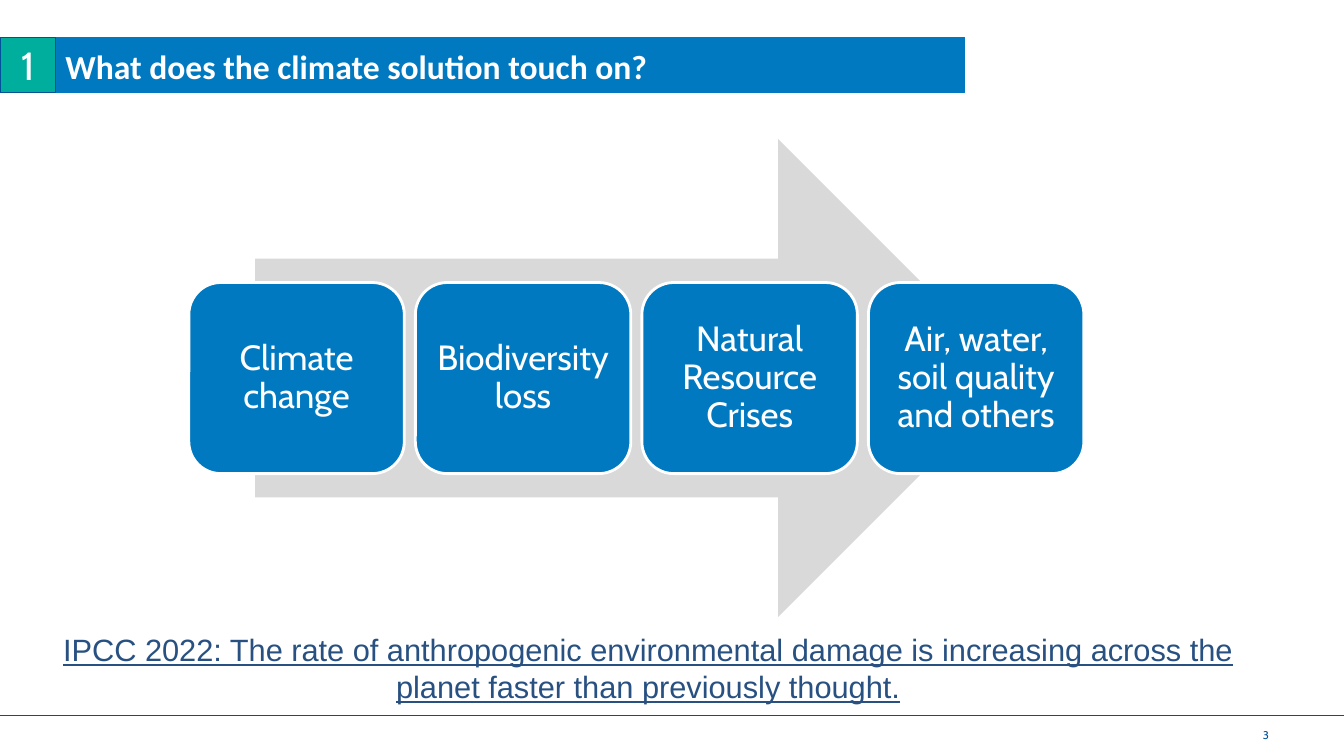
"""Build the slide on what the climate solution touches on."""
from lxml import etree
from pptx import Presentation
from pptx.dml.color import RGBColor
from pptx.enum.shapes import MSO_CONNECTOR, MSO_SHAPE
from pptx.enum.text import MSO_ANCHOR, PP_ALIGN
from pptx.oxml.ns import qn
from pptx.util import Pt

RECT, ROUND = MSO_SHAPE.RECTANGLE, MSO_SHAPE.ROUNDED_RECTANGLE
ARROW, LINE = MSO_SHAPE.RIGHT_ARROW, MSO_CONNECTOR.STRAIGHT
TOP, MID = MSO_ANCHOR.TOP, MSO_ANCHOR.MIDDLE
LEFT, MIDST, RIGHT = PP_ALIGN.LEFT, PP_ALIGN.CENTER, PP_ALIGN.RIGHT

WHITE = RGBColor(0xFF, 0xFF, 0xFF)
BLUE = RGBColor(0x00, 0x79, 0xC1)
NAVY = RGBColor(0x00, 0x51, 0x98)
FOOT = RGBColor(0x00, 0x53, 0x9B)
INK = RGBColor(0x28, 0x51, 0x82)
TEAL = RGBColor(0x00, 0xAE, 0x9E)
GREY = RGBColor(0xD9, 0xD9, 0xD9)

TITLE = "What does the climate solution touch on?"
PART = "1"
PAGE = "3"
CARDS = ["Climate change", "Biodiversity loss", "Natural Resource Crises",
         "Air, water, soil quality and others"]
QUOTE = ("IPCC 2022: The rate of anthropogenic environmental damage is "
         "increasing across the planet faster than previously thought.")

WIDE, HIGH = 960, 540
BAND_Y, BAND_H = 26.6, 39.6
CARD_X, CARD_Y, CARD_W, CARD_H, STEP = 134.9, 201.8, 153.9, 136.5, 161.8
RULE_Y = 510.5

deck = Presentation()
deck.slide_width, deck.slide_height = Pt(WIDE), Pt(HIGH)
slide = deck.slides.add_slide(deck.slide_layouts[6])
parts = slide.shapes


def add_box(kind, spot, fill, edge=None, width=0.75):
    """Draw a filled preset shape, with an outline if an edge is given."""
    box = parts.add_shape(kind, *map(Pt, spot))
    box.shadow.inherit = False
    box.fill.solid()
    box.fill.fore_color.rgb = fill
    if edge is None:
        box.line.fill.background()
    else:
        box.line.color.rgb = edge
        box.line.width = Pt(width)
    return box


def write(box, text, size, face, color, align=MIDST, anchor=MID,
          pad=(7.2, 3.6), space=None, bold=False, under=False):
    """Put one paragraph of text into a box."""
    frame = box.text_frame
    frame.word_wrap = True
    frame.vertical_anchor = anchor
    frame.margin_left = frame.margin_right = Pt(pad[0])
    frame.margin_top = frame.margin_bottom = Pt(pad[1])
    para = frame.paragraphs[0]
    para.alignment = align
    if space:
        para.line_spacing = space
    run = para.add_run()
    run.text = text
    font = run.font
    font.size, font.name, font.color.rgb = Pt(size), face, color
    font.bold, font.underline = bold, under


rule = parts.add_connector(LINE, Pt(0), Pt(RULE_Y), Pt(WIDE), Pt(RULE_Y))
rule.line.color.rgb = NAVY
rule.line.width = Pt(0.25)
etree.SubElement(rule.element.spPr, qn("a:effectLst"))

page = parts.add_textbox(Pt(869), Pt(RULE_Y), Pt(37.5), Pt(29.5))
write(page, PAGE, 8, "Cabin", FOOT, RIGHT, pad=(0, 0))

add_box(ARROW, (182.2, 99.4, 544.3, 341.3), GREY)
for i, label in enumerate(CARDS):
    card = add_box(ROUND, (CARD_X + i * STEP, CARD_Y, CARD_W, CARD_H),
                   BLUE, WHITE, 2)
    write(card, label, 25, "Cabin", WHITE, pad=(7.2, 7.2), space=0.9)

band = add_box(RECT, (BAND_H, BAND_Y, 649.4, BAND_H), BLUE, BLUE)
write(band, TITLE, 24, "Calibri", WHITE, LEFT, TOP, space=1.1, bold=True)

quote = parts.add_textbox(Pt(28), Pt(447.1), Pt(870), Pt(60.5))
write(quote, QUOTE, 22, "Arial", INK, anchor=TOP, under=True)

badge = add_box(RECT, (0, BAND_Y, BAND_H, BAND_H), TEAL, NAVY)
write(badge, PART, 28, "Cabin", WHITE)

deck.save("out.pptx")
